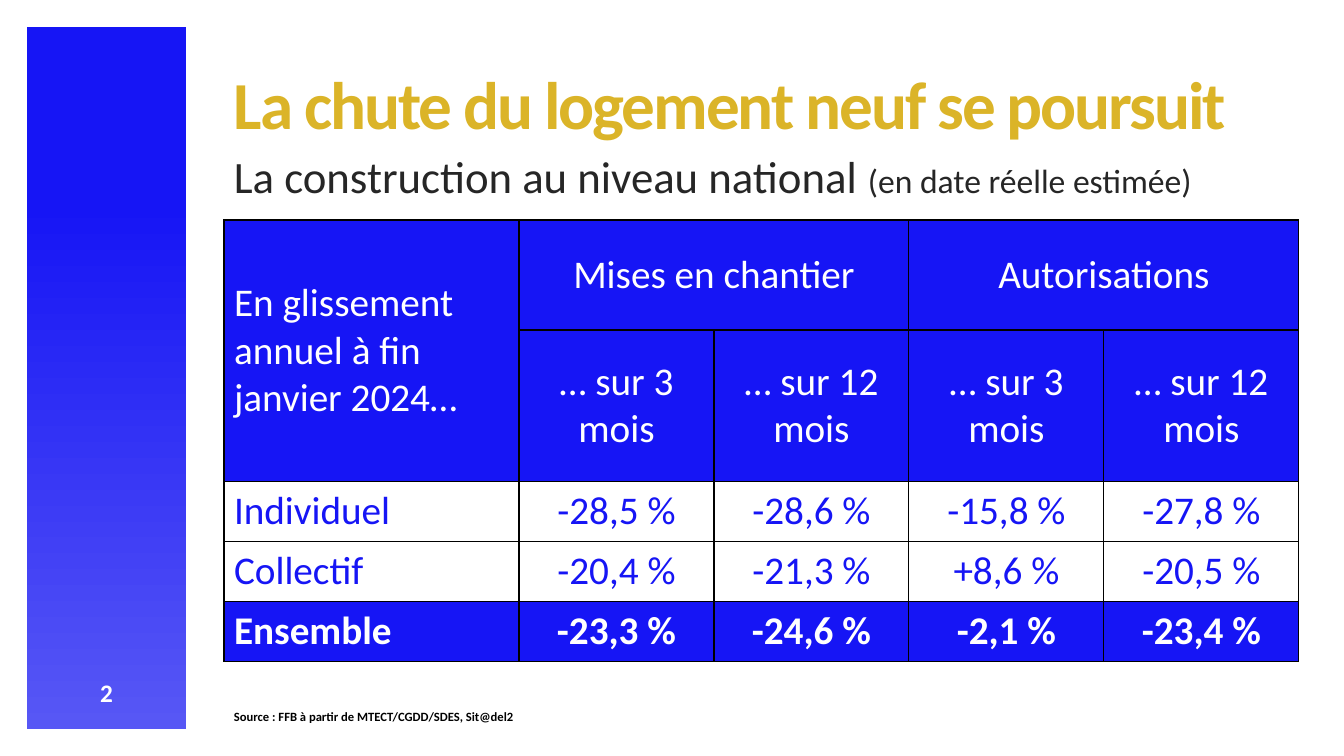
from pptx import Presentation
from pptx.dml.color import RGBColor
from pptx.enum.shapes import MSO_SHAPE
from pptx.enum.text import MSO_ANCHOR, PP_ALIGN
from pptx.oxml import parse_xml
from pptx.oxml.ns import nsdecls
from pptx.util import Emu, Pt

BLUE = RGBColor(0x16, 0x15, 0xF5)
LIGHT = RGBColor(0x57, 0x57, 0xF5)
GOLD = RGBColor(0xDB, 0xB4, 0x28)
GREY = RGBColor(0x26, 0x26, 0x26)
BLACK = RGBColor(0, 0, 0)
WHITE = RGBColor(0xFF, 0xFF, 0xFF)
SCALE = 914400 / 100.8


def px(*nums):
    return [Emu(round(n * SCALE)) for n in nums]


def style(run, size, color, bold=False):
    run.font.name = "Calibri"
    run.font.size = Pt(size)
    run.font.color.rgb = color
    run.font.bold = bold


deck = Presentation()
deck.slide_width, deck.slide_height = px(1344, 756)
slide = deck.slides.add_slide(deck.slide_layouts[6])

# Side band
band = slide.shapes.add_shape(MSO_SHAPE.RECTANGLE, *px(27, 27, 159, 702))
band.shadow.inherit = False
band.line.fill.background()
band.fill.gradient()
band.fill.gradient_angle = 270
for stop, color, place in zip(band.fill.gradient_stops, (BLUE, LIGHT), (0.25, 1)):
    stop.color.rgb = color
    stop.position = place

# Page number, title, subtitle and source: box, alignment, line spacing, runs
texts = [
    ((27, 672, 159, 40), PP_ALIGN.CENTER, 1, [("2", 18, WHITE, True)]),
    ((224, 66, 1075, 84), PP_ALIGN.LEFT, 0.9,
     [("La chute du logement neuf se poursuit", 48, GOLD, True)]),
    ((224, 150, 1075, 50), PP_ALIGN.LEFT, 0.9,
     [("La construction au niveau national ", 32, GREY, False),
      ("(en date réelle estimée)", 24, GREY, False)]),
    ((224, 706, 905, 24), PP_ALIGN.LEFT, 0.9,
     [("Source : FFB à partir de MTECT/CGDD/SDES, Sit@del2", 9, BLACK, True)]),
]
for box, align, space, runs in texts:
    frame = slide.shapes.add_textbox(*px(*box)).text_frame
    frame.word_wrap = True
    para = frame.paragraphs[0]
    para.alignment = align
    para.line_spacing = space
    for words, size, color, bold in runs:
        run = para.add_run()
        run.text = words
        style(run, size, color, bold)
        if size == 48:
            run.font._element.set("spc", "-150")

# Table of yearly changes
rows = [
    ["En glissement annuel à fin janvier 2024…", "Mises en chantier", "",
     "Autorisations", ""],
    [""] + ["… sur 3 mois", "… sur 12 mois"] * 2,
    ["Individuel", "-28,5 %", "-28,6 %", "-15,8 %", "-27,8 %"],
    ["Collectif", "-20,4 %", "-21,3 %", "+8,6 %", "-20,5 %"],
    ["Ensemble", "-23,3 %", "-24,6 %", "-2,1 %", "-23,4 %"],
]
table = slide.shapes.add_table(5, 5, *px(224, 220, 1075, 391)).table
for col, wide in zip(table.columns, px(295, 195, 195, 195, 195)):
    col.width = wide
for row, high in zip(table.rows, px(110, 101, 60, 60, 60)):
    row.height = high

for r, row in enumerate(rows):
    plain = r in (2, 3)
    for c, words in enumerate(row):
        cell = table.cell(r, c)
        props = cell._tc.get_or_add_tcPr()
        for side in "LRTB":
            props.append(parse_xml(
                f'<a:ln{side} {nsdecls("a")} w="12700"><a:solidFill>'
                f'<a:srgbClr val="{BLACK}"/></a:solidFill></a:ln{side}>'))
        cell.fill.solid()
        cell.fill.fore_color.rgb = WHITE if plain else BLUE
        cell.vertical_anchor = MSO_ANCHOR.MIDDLE
        cell.text_frame.text = words
        para = cell.text_frame.paragraphs[0]
        para.alignment = PP_ALIGN.CENTER if c else PP_ALIGN.LEFT
        for run in para.runs:
            style(run, 28, BLUE if plain else WHITE, r == 4)

# Merged headings
table.cell(0, 0).merge(table.cell(1, 0))
for c in (1, 3):
    table.cell(0, c).merge(table.cell(0, c + 1))

deck.save("out.pptx")
